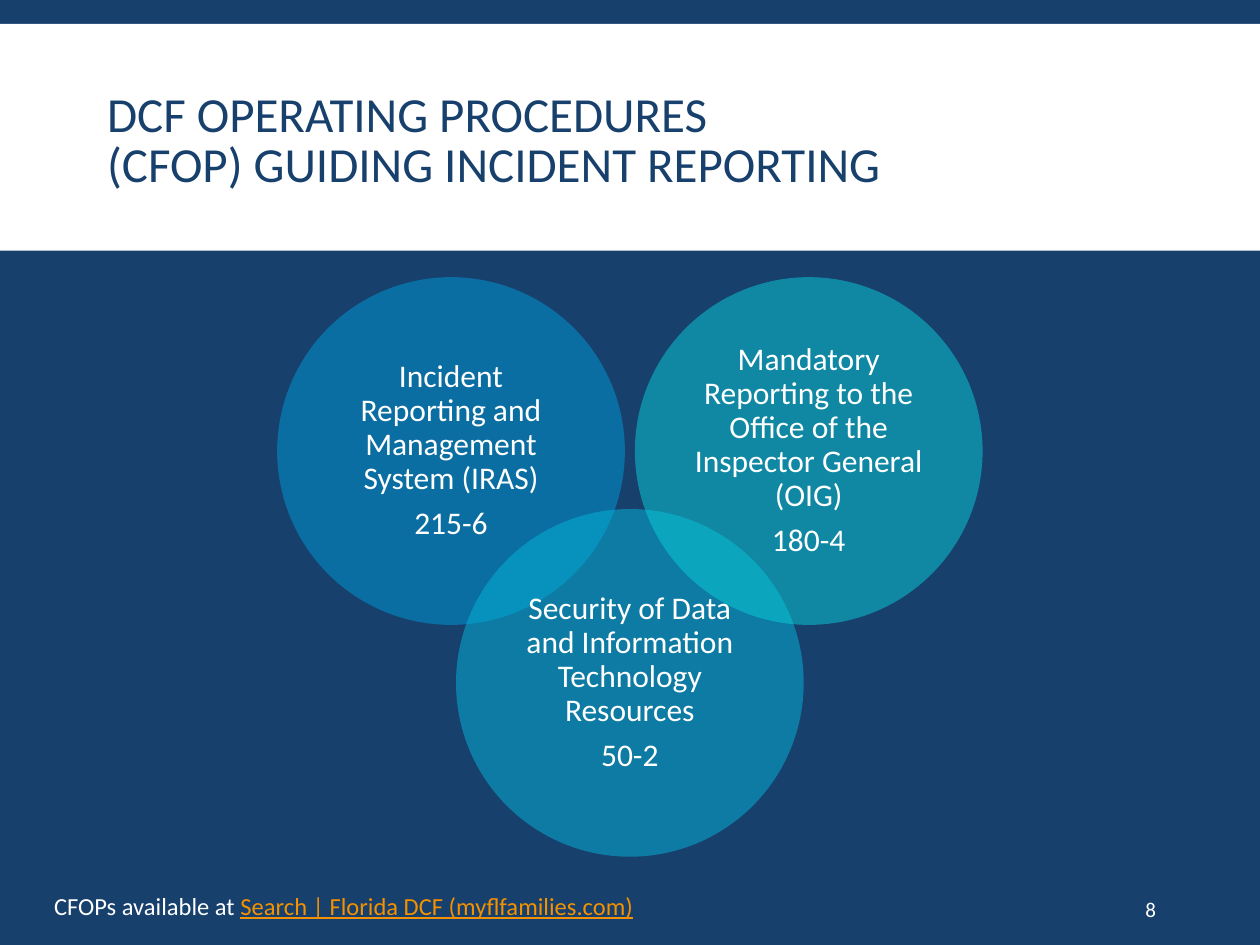
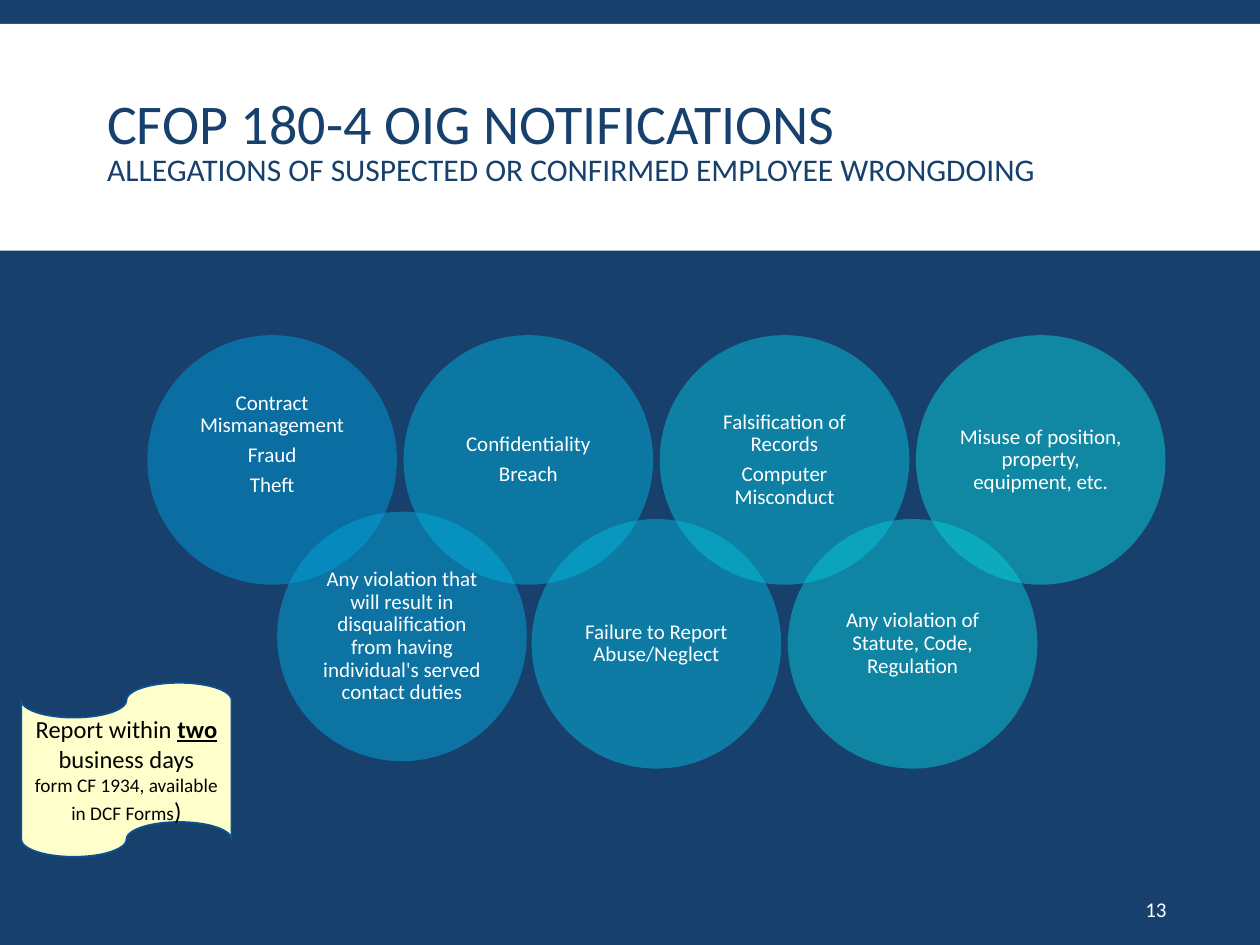
from lxml import etree
from pptx import Presentation
from pptx.dml.color import RGBColor
from pptx.enum import shapes, text
from pptx.oxml import ns
from pptx.util import Pt

FONT = "Calibri"
COLORS = {
    "navy": "17406D",
    "white": "FFFFFF",
    "black": "000000",
    "link": "F49100",
    "note": "FFFFCC",
    "note_line": "0B5292",
}

PROCEDURES = {
    "title": [("DCF OPERATING PROCEDURES\v(CFOP) GUIDING INCIDENT REPORTING", 28)],
    "title_width": 534.2,
    "number": "8",
    "left": 158.4, "step": 102.2, "tops": (158.4, 290.9), "diameter": 198.7,
    "size": 18, "inset": 5,
    "circles": [
        ("009DD9", ["Incident Reporting and Management System (IRAS)", "215-6"]),
        ("05B7D9", ["Security of Data and Information Technology Resources", "50-2"]),
        ("0BD0D9", ["Mandatory Reporting to the Office of the Inspector General (OIG)",
                    "180-4"]),
    ],
}
NOTIFICATIONS = {
    "title": [("CFOP 180-4 OIG NOTIFICATIONS\v", 32),
              ("ALLEGATIONS OF SUSPECTED OR CONFIRMED EMPLOYEE WRONGDOING", 18)],
    "title_width": 612,
    "number": "13",
    "left": 84.2, "step": 73.2, "tops": (191.5, 296.6), "diameter": 142.6,
    "size": 12, "inset": 3.6,
    "circles": [
        ("009DD9", ["Contract Mismanagement", "Fraud", "Theft"]),
        ("02A6D9", ["Any violation that will result in disqualification from having "
                    "individual's served contact duties"]),
        ("04AFD9", ["Confidentiality", "Breach"]),
        ("05B7D9", ["Failure to Report Abuse/Neglect"]),
        ("07C0D9", ["Falsification of Records", "Computer Misconduct"]),
        ("09C8D9", ["Any violation of Statute, Code, Regulation"]),
        ("0BD0D9", ["Misuse of position, property, equipment, etc."]),
    ],
    "nudges": {1: (1, -4.2)},
    "raised_text": {0: 17.2},
}
NOTE = [
    [("Report within ", 14, False), ("two ", 14, True), ("business days", 14, False)],
    [("form CF 1934, available in DCF Forms", 11, False), (")", 14, False)],
]
SOURCE = [("CFOPs available at ", "white", False),
          ("Search | Florida DCF (myflfamilies.com)", "link", True)]


def rgb(value):
    return RGBColor.from_string(COLORS.get(value, value))


def style_font(font, size, color):
    font.name = FONT
    font.size = Pt(size)
    font.color.rgb = rgb(color)


def set_frame(frame, insets=(7.2, 3.6, 7.2, 3.6), anchor=text.MSO_ANCHOR.MIDDLE):
    frame.word_wrap = True
    frame.auto_size = text.MSO_AUTO_SIZE.NONE
    frame.vertical_anchor = anchor
    (frame.margin_left, frame.margin_top,
     frame.margin_right, frame.margin_bottom) = map(Pt, insets)


def add_filled(slide, kind, box, fill, line=None, opacity=None):
    shape = slide.shapes.add_shape(kind, *map(Pt, box))
    shape.shadow.inherit = False
    shape.fill.solid()
    shape.fill.fore_color.rgb = rgb(fill)
    if line:
        shape.line.color.rgb = rgb(line)
        shape.line.width = Pt(1)
    else:
        shape.line.fill.background()
    if opacity:
        color = shape._element.spPr.find(".//" + ns.qn("a:srgbClr"))
        etree.SubElement(color, ns.qn("a:alpha"), val=str(opacity * 1000))
    return shape


def add_textbox(slide, box, **frame_options):
    frame = slide.shapes.add_textbox(*map(Pt, box)).text_frame
    set_frame(frame, **frame_options)
    return frame


def add_base_slide(presentation, content):
    slide = presentation.slides.add_slide(presentation.slide_layouts[5])
    slide.background.fill.solid()
    slide.background.fill.fore_color.rgb = rgb("navy")
    band = add_filled(slide, shapes.MSO_SHAPE.RECTANGLE, (0, 13.7, 720, 129.6), "white")
    title = slide.shapes.title
    title._element.addprevious(band._element)
    title.left, title.top, title.width, title.height = map(
        Pt, (54, 22.3, content["title_width"], 118.8))
    set_frame(title.text_frame)
    paragraph = title.text_frame.paragraphs[0]
    paragraph.alignment = text.PP_ALIGN.LEFT
    paragraph.line_spacing = 0.85
    for words, size in content["title"]:
        lines = words.split("\v")
        for index, line in enumerate(lines):
            if index:
                paragraph.add_line_break()
            if line:
                run = paragraph.add_run()
                run.text = line
                style_font(run.font, size, "navy")
    number = add_textbox(slide, (650.9, 505.4, 56.2, 28.8),
                         insets=(3.6, 3.6, 7.2, 3.6)).paragraphs[0]
    number.text = content["number"]
    style_font(number.font, 12, "white")
    return slide


def add_circles(slide, content):
    diameter, inset, size = content["diameter"], content["inset"], content["size"]
    for index, (color, lines) in enumerate(content["circles"]):
        shift_x, shift_y = content.get("nudges", {}).get(index, (0, 0))
        raise_by = content.get("raised_text", {}).get(index, 0)
        box = (content["left"] + index * content["step"] + shift_x,
               content["tops"][index % 2] + shift_y, diameter, diameter)
        circle = add_filled(slide, shapes.MSO_SHAPE.OVAL, box, color, opacity=50)
        frame = circle.text_frame
        set_frame(frame, (inset, inset, inset, inset + raise_by))
        frame.text = "\n".join(lines)
        for paragraph in frame.paragraphs:
            paragraph.alignment = text.PP_ALIGN.CENTER
            paragraph.line_spacing = 0.9
            paragraph.space_after = Pt(size * 0.35)
            style_font(paragraph.font, size, "white")


def add_source(slide):
    frame = add_textbox(slide, (23.8, 505.4, 552.2, 24.5), anchor=text.MSO_ANCHOR.TOP)
    for words, color, underline in SOURCE:
        run = frame.paragraphs[0].add_run()
        run.text = words
        style_font(run.font, 14, color)
        run.font.underline = underline


def add_note(slide):
    note = add_filled(slide, shapes.MSO_SHAPE.FLOWCHART_PUNCHED_TAPE,
                      (12.2, 390.2, 120.2, 99.4), "note", line="note_line")
    frame = note.text_frame
    set_frame(frame)
    for index, runs in enumerate(NOTE):
        paragraph = frame.add_paragraph() if index else frame.paragraphs[0]
        paragraph.alignment = text.PP_ALIGN.CENTER
        for words, size, emphasis in runs:
            run = paragraph.add_run()
            run.text = words
            style_font(run.font, size, "black")
            run.font.bold = run.font.underline = emphasis


def main():
    presentation = Presentation()
    presentation.slide_width, presentation.slide_height = Pt(720), Pt(540)
    for content, add_extra in ((PROCEDURES, add_source), (NOTIFICATIONS, add_note)):
        slide = add_base_slide(presentation, content)
        add_circles(slide, content)
        add_extra(slide)
    presentation.save("out.pptx")


if __name__ == "__main__":
    main()
